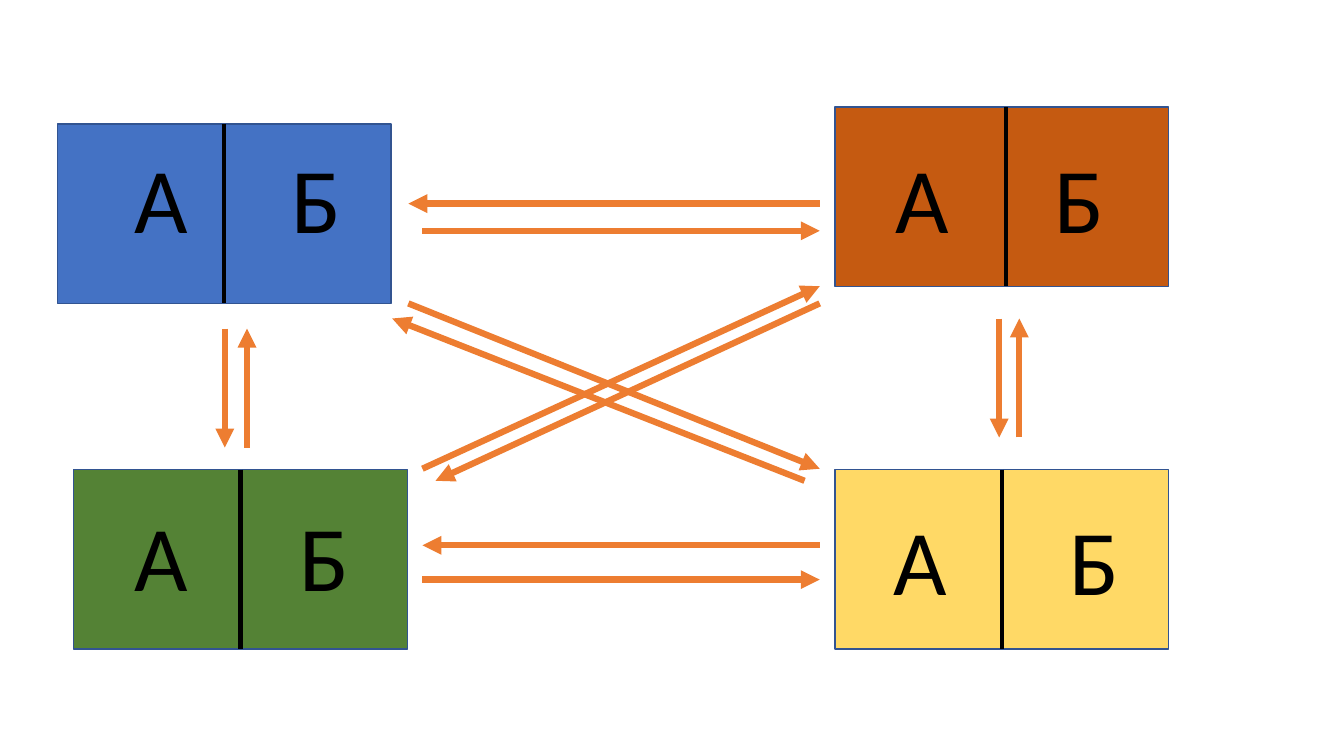
import pptx
import pptx.dml.color
import pptx.enum.shapes
import pptx.enum.text
import pptx.oxml
import pptx.oxml.ns
import pptx.util

Inches = pptx.util.Inches

BLOCK_WIDTH, BLOCK_HEIGHT = 3.31, 1.78
BLOCKS = [
    # left, top, fill, divider shift, letter top, letter lefts
    (0.57, 1.23, "4472C4", 0, 0.12, (0.67, 2.22)),
    (0.73, 4.66, "548235", 0, 0.24, (0.51, 2.14)),
    (8.28, 4.66, "FFD966", 0, 0.28, (0.48, 2.23)),
    (8.28, 1.06, "C55A11", 0.04, 0.29, (0.5, 2.08)),
]


def color(hex_value):
    return pptx.dml.color.RGBColor.from_string(hex_value)


def add_line(slide, start, end, hex_value, weight, arrow=False):
    connector = slide.shapes.add_connector(
        pptx.enum.shapes.MSO_CONNECTOR.STRAIGHT,
        *(Inches(value) for value in (*start, *end)))
    connector.line.color.rgb = color(hex_value)
    connector.line.width = pptx.util.Pt(weight)
    if arrow:
        tail = pptx.oxml.parse_xml(
            f'<a:tailEnd {pptx.oxml.ns.nsdecls("a")} type="triangle"/>')
        connector.line._get_or_add_ln().append(tail)
    effects = pptx.oxml.parse_xml(f'<a:effectLst {pptx.oxml.ns.nsdecls("a")}/>')
    connector._element.spPr.append(effects)
    return connector


def add_letter(slide, letter, left, top):
    box = slide.shapes.add_textbox(
        Inches(left), Inches(top), Inches(0.5), Inches(1.21))
    frame = box.text_frame
    frame.word_wrap = True
    frame.auto_size = pptx.enum.text.MSO_AUTO_SIZE.SHAPE_TO_FIT_TEXT
    run = frame.paragraphs[0].add_run()
    run.text = letter
    run.font.name = "Calibri"
    run.font.size = pptx.util.Pt(66)
    run.font.color.rgb = color("000000")


def draw_block(slide, left, top, fill, divider_shift, letter_top, letter_lefts):
    block = slide.shapes.add_shape(
        pptx.enum.shapes.MSO_SHAPE.RECTANGLE, Inches(left), Inches(top),
        Inches(BLOCK_WIDTH), Inches(BLOCK_HEIGHT))
    block.shadow.inherit = False
    block.fill.solid()
    block.fill.fore_color.rgb = color(fill)
    block.line.color.rgb = color("325491")
    block.line.width = pptx.util.Pt(1)
    middle = left + BLOCK_WIDTH / 2 + divider_shift
    divider = add_line(
        slide, (middle, top), (middle, top + BLOCK_HEIGHT), "000000", 3)
    if not divider_shift:
        divider.begin_connect(block, 0)
        divider.end_connect(block, 2)
    for letter, letter_left in zip("АБ", letter_lefts):
        add_letter(slide, letter, left + letter_left, top + letter_top)


def draw_arrows(slide, left, top, arrows):
    for start_x, start_y, end_x, end_y in arrows:
        add_line(slide, (left + start_x, top + start_y),
                 (left + end_x, top + end_y), "ED7D31", 4.5, arrow=True)


def draw_vertical_exchange(slide, left, top, width, height):
    draw_arrows(slide, left, top, [
        (0, 0, 0, height), (width, height, width, 0)])


def draw_horizontal_exchange(slide, left, top, width, height, inset=0):
    draw_arrows(slide, left, top, [
        (width, 0, 0, 0), (inset, height, width, height)])


def draw_crossing_exchange(slide, left, top, width, height):
    draw_arrows(slide, left, top, [
        (0.16, 0.17, width, height - 0.12),
        (width - 0.15, height, 0, 0.32),
        (0.3, height - 0.12, width, 0),
        (width, 0.17, 0.43, height)])


def main():
    presentation = pptx.Presentation()
    presentation.slide_width = Inches(13.33)
    presentation.slide_height = Inches(7.5)
    slide = presentation.slides.add_slide(presentation.slide_layouts[6])
    for block in BLOCKS:
        draw_block(slide, *block)
    draw_vertical_exchange(slide, 2.23, 3.26, 0.22, 1.18)
    draw_vertical_exchange(slide, 9.91, 3.16, 0.2, 1.18)
    draw_horizontal_exchange(slide, 4.05, 2.02, 4.08, 0.27, inset=0.14)
    draw_horizontal_exchange(slide, 4.19, 5.41, 3.94, 0.34)
    draw_crossing_exchange(slide, 3.89, 2.84, 4.24, 1.93)
    presentation.save("out.pptx")


if __name__ == "__main__":
    main()
